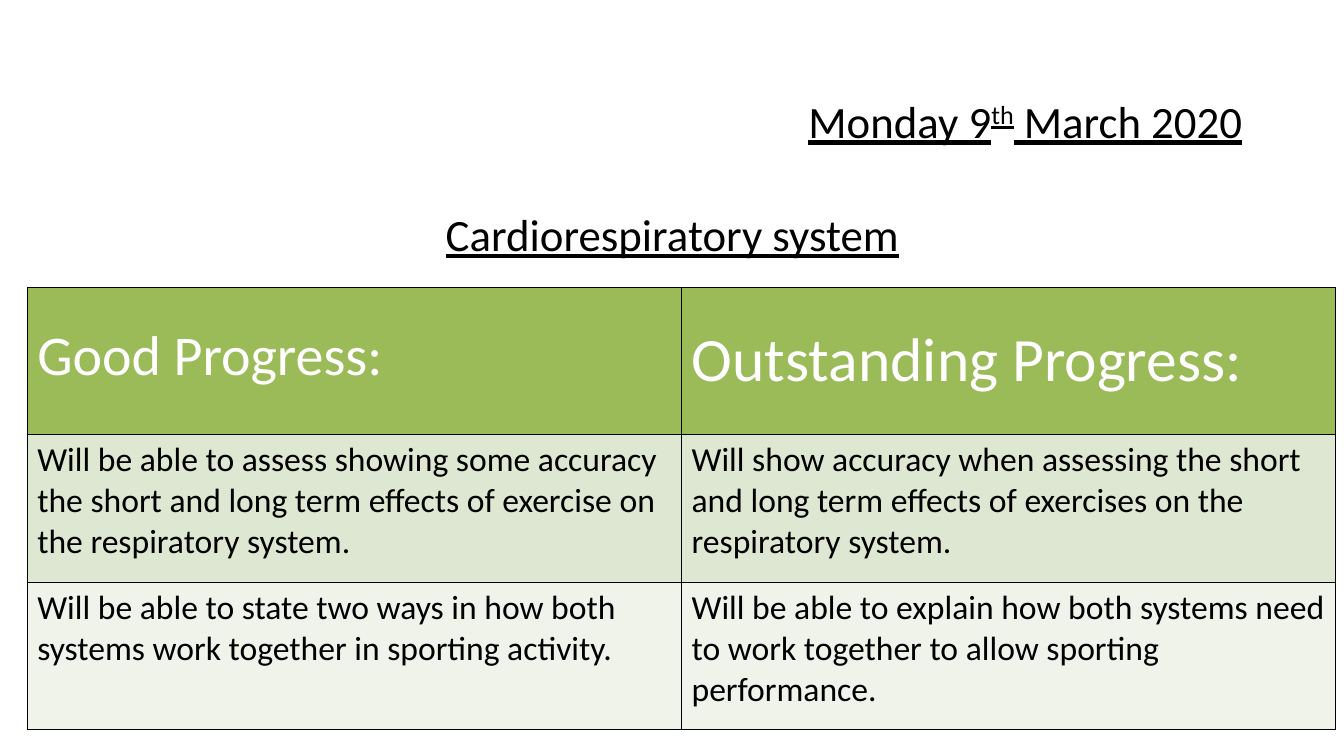
"""Build a lesson slide with the date, the topic and a table of progress goals."""
from lxml.etree import SubElement
from pptx import Presentation
from pptx.dml.color import RGBColor
from pptx.enum.text import MSO_ANCHOR as Anchor, PP_ALIGN as Align
from pptx.oxml.ns import qn
from pptx.util import Inches, Pt

BLACK = RGBColor(0x00, 0x00, 0x00)
WHITE = RGBColor(0xFF, 0xFF, 0xFF)
GREEN = RGBColor(0x9B, 0xBB, 0x59)
LIGHT_GREEN = RGBColor(0xDE, 0xE7, 0xD1)
PALE_GREEN = RGBColor(0xEF, 0xF3, 0xEA)


def add_span(para, text, size, color=BLACK, underline=False):
    span = para.add_run()
    span.text = text
    span.font.color.rgb = color
    formats = {"name": "Calibri", "size": Pt(size), "bold": False, "underline": underline}
    for name, value in formats.items():
        setattr(span.font, name, value)
    return span


def add_line(page, place, anchor, align):
    frame = page.shapes.add_textbox(*map(Inches, place)).text_frame
    frame.word_wrap = True
    frame.vertical_anchor = anchor
    frame.paragraphs[0].alignment = align
    return frame.paragraphs[0]


deck = Presentation()
deck.slide_width, deck.slide_height = Inches(13.33), Inches(7.5)
page = deck.slides.add_slide(deck.slide_layouts[6])

date = add_line(page, (7.7, 0.4, 4.72, 1.45), Anchor.MIDDLE, Align.RIGHT)
add_span(date, " ", 44)
add_span(date, "Monday 9", 32, underline=True)
ordinal = add_span(date, "th", 32, underline=True)
ordinal.font._element.set("baseline", "30000")
add_span(date, " March 2020", 32, underline=True)

topic = add_line(page, (0.92, 2, 11.5, 0.6), Anchor.TOP, Align.CENTER)
add_span(topic, "Cardiorespiratory system", 32, underline=True)

goals = [
    (GREEN, WHITE, (40, 44), 0.35, ("Good Progress:", "Outstanding Progress:")),
    (LIGHT_GREEN, BLACK, (24, 24), 0.05, (
        "Will be able to assess showing some accuracy the short and long term "
        "effects of exercise on the respiratory system.",
        "Will show accuracy when assessing the short and long term "
        "effects of exercises on the respiratory system.")),
    (PALE_GREEN, BLACK, (24, 24), 0.05, (
        "Will be able to state two ways in how both systems work together "
        "in sporting activity.",
        "Will be able to explain how both systems need to work together "
        "to allow sporting performance.")),
]
table = page.shapes.add_table(
    len(goals), 2, Inches(0.27), Inches(2.85), Inches(12.98), Inches(4.39)).table

for row, (fill, color, sizes, top, texts) in enumerate(goals):
    for column, (size, text) in enumerate(zip(sizes, texts)):
        cell = table.cell(row, column)
        cell.margin_top = Inches(top)
        properties = cell._tc.get_or_add_tcPr()
        for side in ("lnL", "lnR", "lnT", "lnB"):
            border = SubElement(properties, qn(f"a:{side}"), w=str(Pt(1)))
            SubElement(SubElement(border, qn("a:solidFill")), qn("a:srgbClr"), val=str(BLACK))
        cell.fill.solid()
        cell.fill.fore_color.rgb = fill
        add_span(cell.text_frame.paragraphs[0], text, size, color)

deck.save("out.pptx")
